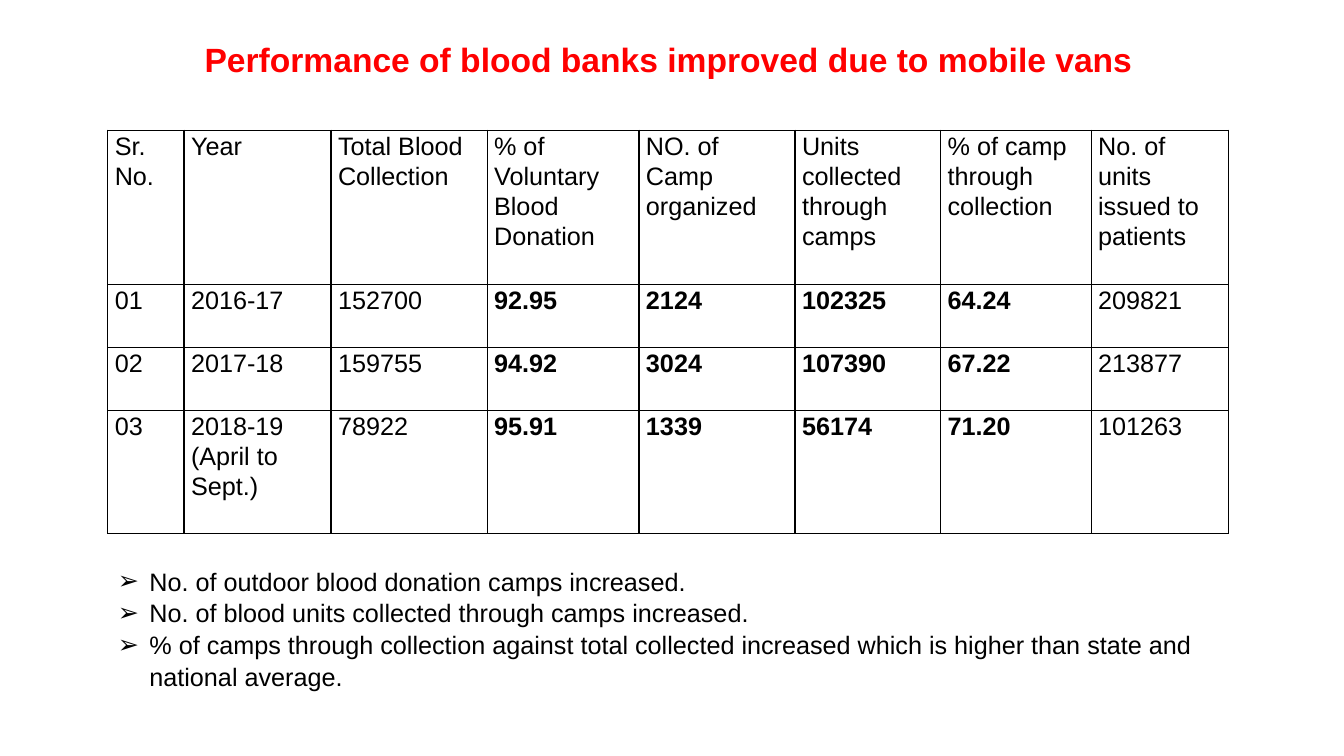
from lxml import etree
from pptx import Presentation
from pptx.dml.color import RGBColor
from pptx.enum.text import MSO_ANCHOR, MSO_AUTO_SIZE, PP_ALIGN
from pptx.oxml.ns import qn
from pptx.util import Pt

BLACK = RGBColor(0, 0, 0)
RED = RGBColor(255, 0, 0)
CENTER, LEFT = PP_ALIGN.CENTER, PP_ALIGN.LEFT
MIDDLE, TOP = MSO_ANCHOR.MIDDLE, MSO_ANCHOR.TOP
NONE = MSO_AUTO_SIZE.NONE

deck = Presentation()
deck.slide_width, deck.slide_height = Pt(960), Pt(540)
slide = deck.slides.add_slide(deck.slide_layouts[1])


def write(frame, lines, size=18, color=BLACK, bold=False, align=LEFT,
          anchor=TOP, space=1.0, bullet=None):
    frame.word_wrap = True
    frame.vertical_anchor = anchor
    for i, line in enumerate(lines):
        para = frame.add_paragraph() if i else frame.paragraphs[0]
        para.alignment = align
        para.line_spacing = space
        para.space_before = para.space_after = Pt(0)
        run = para.add_run()
        run.text = line
        font = run.font
        font.name, font.size, font.bold = "Arial", Pt(size), bold
        font.color.rgb = color
        if bullet:
            props = para._p.get_or_add_pPr()
            props.set("marL", str(Pt(22.5)))
            props.set("indent", str(Pt(-22.5)))
            etree.SubElement(props, qn("a:buChar"), char=bullet)


title = slide.shapes.title
title.left, title.top, title.width, title.height = Pt(77), Pt(24.5), Pt(801), Pt(36)
title.text_frame.auto_size = NONE
write(title.text_frame, ["Performance of blood banks improved due to mobile vans"],
      size=24, color=RED, bold=True, align=CENTER, anchor=MIDDLE)

rows = [
    ["Sr. No.", "Year", "Total Blood Collection", "% of Voluntary Blood Donation",
     "NO. of Camp organized", "Units collected through camps",
     "% of camp through collection", "No. of units issued to patients"],
    ["01", "2016-17", "152700", "92.95", "2124", "102325", "64.24", "209821"],
    ["02", "2017-18", "159755", "94.92", "3024", "107390", "67.22", "213877"],
    ["03", "2018-19 (April to Sept.)", "78922", "95.91", "1339", "56174", "71.20", "101263"],
]
widths = [54.5, 105, 111.5, 108.5, 111.5, 104, 107.5, 98]
heights = [110.5, 45, 45, 87.5]

grid = slide.shapes.add_table(len(rows), len(widths), Pt(77), Pt(93),
                              Pt(sum(widths)), Pt(sum(heights)))
table = grid.table
table.first_row = table.horz_banding = False
for column, width in zip(table.columns, widths):
    column.width = Pt(width)
for r, (row, height) in enumerate(zip(rows, heights)):
    table.rows[r].height = Pt(height)
    for c, text in enumerate(row):
        cell = table.cell(r, c)
        cell.margin_left = cell.margin_right = Pt(5)
        cell.margin_top = cell.margin_bottom = Pt(0)
        write(cell.text_frame, [text], bold=r > 0 and 3 <= c <= 6, space=1.07)
        props = cell._tc.get_or_add_tcPr()
        for side in ("a:lnL", "a:lnR", "a:lnT", "a:lnB"):
            edge = etree.SubElement(props, qn(side), w=str(Pt(1)))
            fill = etree.SubElement(edge, qn("a:solidFill"))
            etree.SubElement(fill, qn("a:srgbClr"), val=str(BLACK))
        cell.fill.background()

notes = slide.placeholders[1]
notes.left, notes.top, notes.width, notes.height = Pt(77), Pt(399.5), Pt(816.5), Pt(94.5)
notes.text_frame.auto_size = NONE
write(notes.text_frame, [
    "No. of outdoor blood donation camps increased.",
    "No. of blood units collected through camps increased.",
    "% of camps through collection against total collected increased "
    "which is higher than state and national average.",
], space=1.05, bullet="➢")

deck.save("out.pptx")
